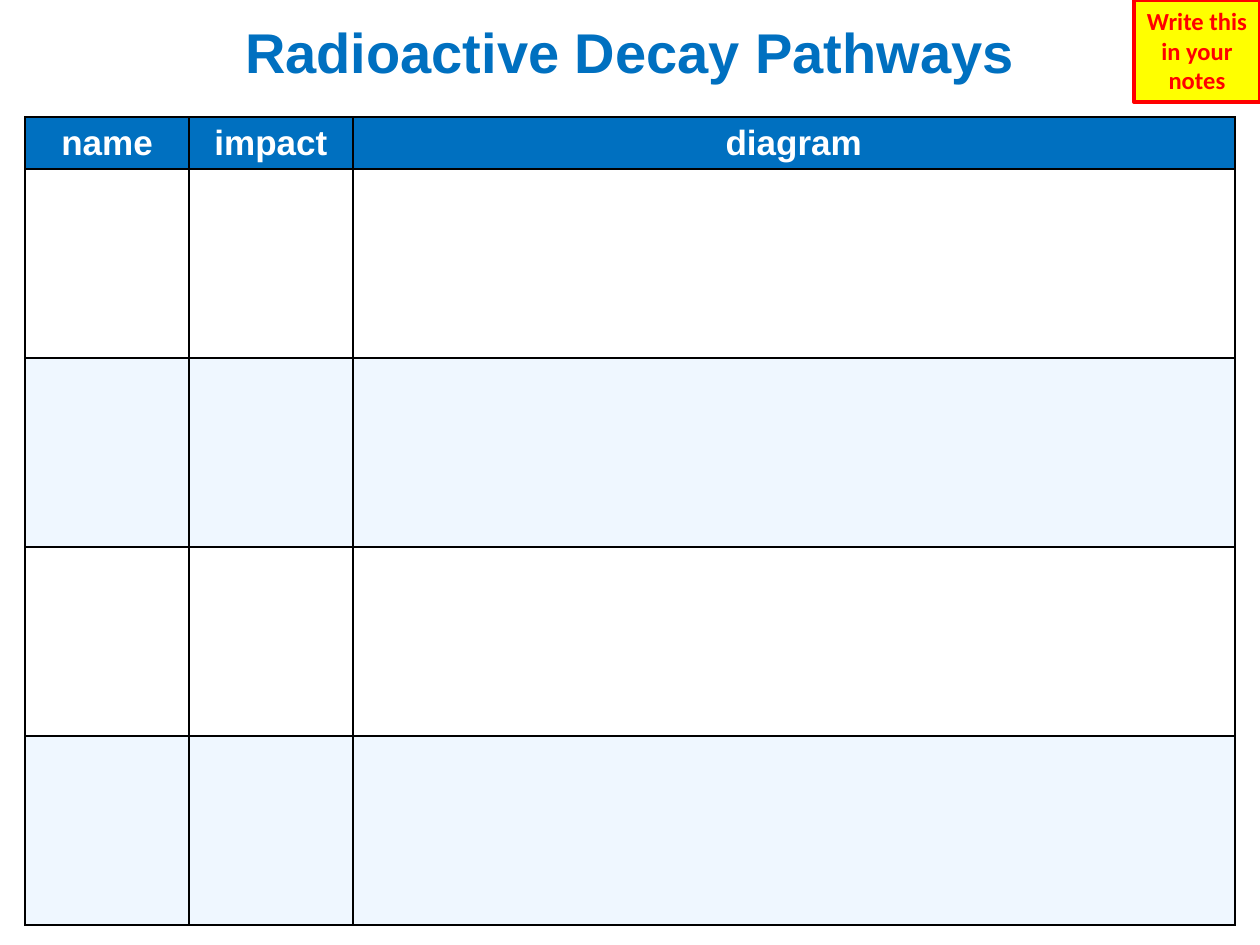
from lxml import etree
from pptx import Presentation
from pptx.dml.color import RGBColor
from pptx.enum.shapes import MSO_SHAPE
from pptx.enum.text import MSO_ANCHOR, PP_ALIGN
from pptx.oxml.ns import qn
from pptx.util import Pt

CENTER = PP_ALIGN.CENTER
MIDDLE = MSO_ANCHOR.MIDDLE
RECTANGLE = MSO_SHAPE.RECTANGLE
BLUE, PALE, WHITE, BLACK = "0070C0", "EFF7FF", "FFFFFF", "000000"
YELLOW, RED = "FFFF00", "FF0000"


def add_text(tf, text, size, font, color):
    p = tf.paragraphs[0]
    p.alignment = CENTER
    r = p.add_run()
    r.text = text
    r.font.size = Pt(size)
    r.font.name = font
    r.font.bold = True
    r.font.color.rgb = RGBColor.from_string(color)


def set_borders(cell, visible):
    tcPr = cell._tc.get_or_add_tcPr()
    for i, side in enumerate(("lnL", "lnR", "lnT", "lnB")):
        ln = etree.Element(qn("a:" + side), w=str(Pt(1)))
        if side in visible:
            fill = etree.SubElement(ln, qn("a:solidFill"))
            etree.SubElement(fill, qn("a:srgbClr"), val=BLACK)
        else:
            etree.SubElement(ln, qn("a:noFill"))
        tcPr.insert(i, ln)


prs = Presentation()
prs.slide_width, prs.slide_height = Pt(720), Pt(540)
s = prs.slides.add_slide(prs.slide_layouts[6])

# Table: title row, header row and four rows to fill in
col_widths = [93.6, 93.6, 504]
row_heights = [57.6, 29.52] + [108] * 4
table = s.shapes.add_table(len(row_heights), len(col_widths), Pt(14.4), Pt(9.36),
                           Pt(sum(col_widths)), Pt(sum(row_heights))).table
table.first_row = False
table.horz_banding = False
for col, width in zip(table.columns, col_widths):
    col.width = Pt(width)
for row, height in zip(table.rows, row_heights):
    row.height = Pt(height)

# Fills and borders
row_fills = [None, BLUE, WHITE, PALE, WHITE, PALE]
for row, color in zip(table.rows, row_fills):
    for cell in row.cells:
        if color:
            cell.fill.solid()
            cell.fill.fore_color.rgb = RGBColor.from_string(color)
            set_borders(cell, ("lnL", "lnR", "lnT", "lnB"))
        else:
            cell.fill.background()
            set_borders(cell, ("lnB",))

# Title across all columns
title = table.cell(0, 0)
title.merge(table.cell(0, 2))
add_text(title.text_frame, "Radioactive Decay Pathways", 32, "Arial", BLUE)

# Column headings
for cell, heading in zip(table.rows[1].cells, ("name", "impact", "diagram")):
    cell.vertical_anchor = MIDDLE
    add_text(cell.text_frame, heading, 20, "Arial", WHITE)

# Reminder in the corner
sp = s.shapes.add_shape(RECTANGLE, Pt(648), Pt(0), Pt(72), Pt(58.32))
sp.shadow.inherit = False
sp.fill.solid()
sp.fill.fore_color.rgb = RGBColor.from_string(YELLOW)
sp.line.color.rgb = RGBColor.from_string(RED)
sp.line.width = Pt(2.25)
tf = sp.text_frame
tf.word_wrap = True
tf.vertical_anchor = MSO_ANCHOR.TOP
add_text(tf, "Write this in your notes", 14, "Calibri", RED)

prs.save("out.pptx")
